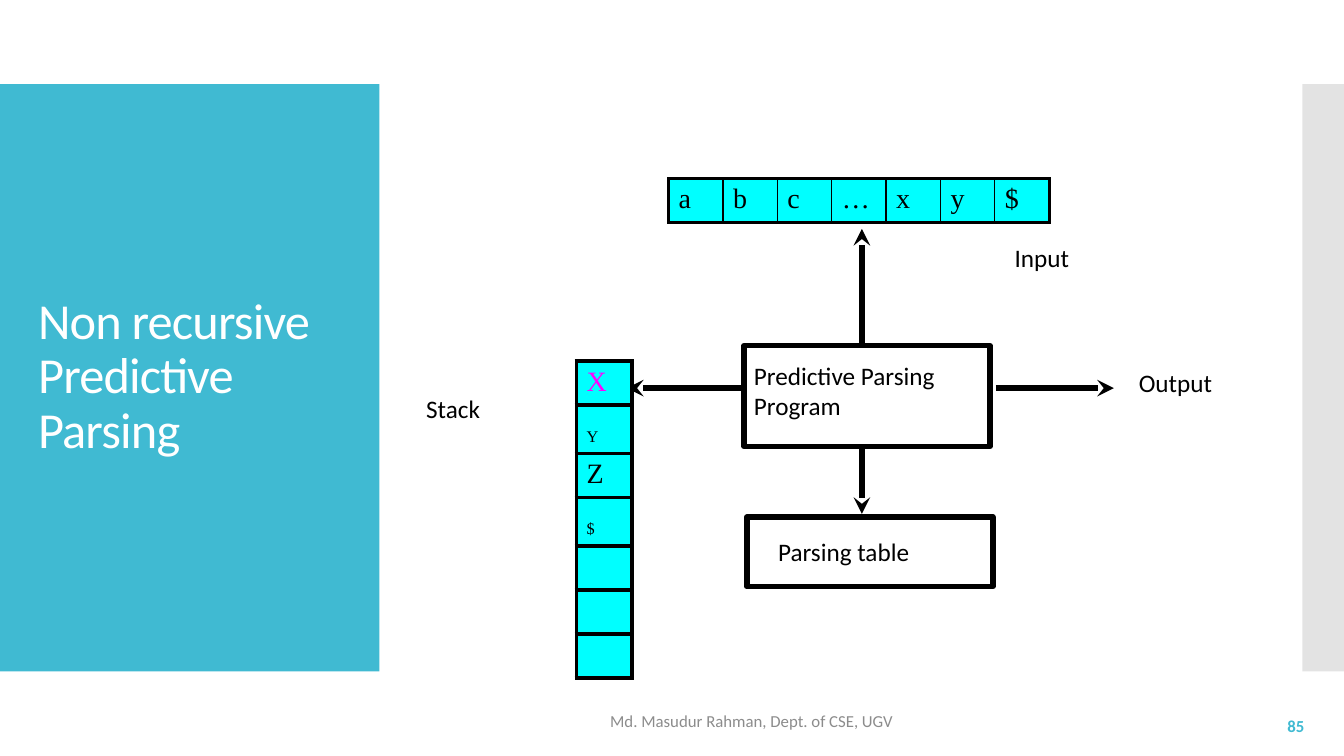
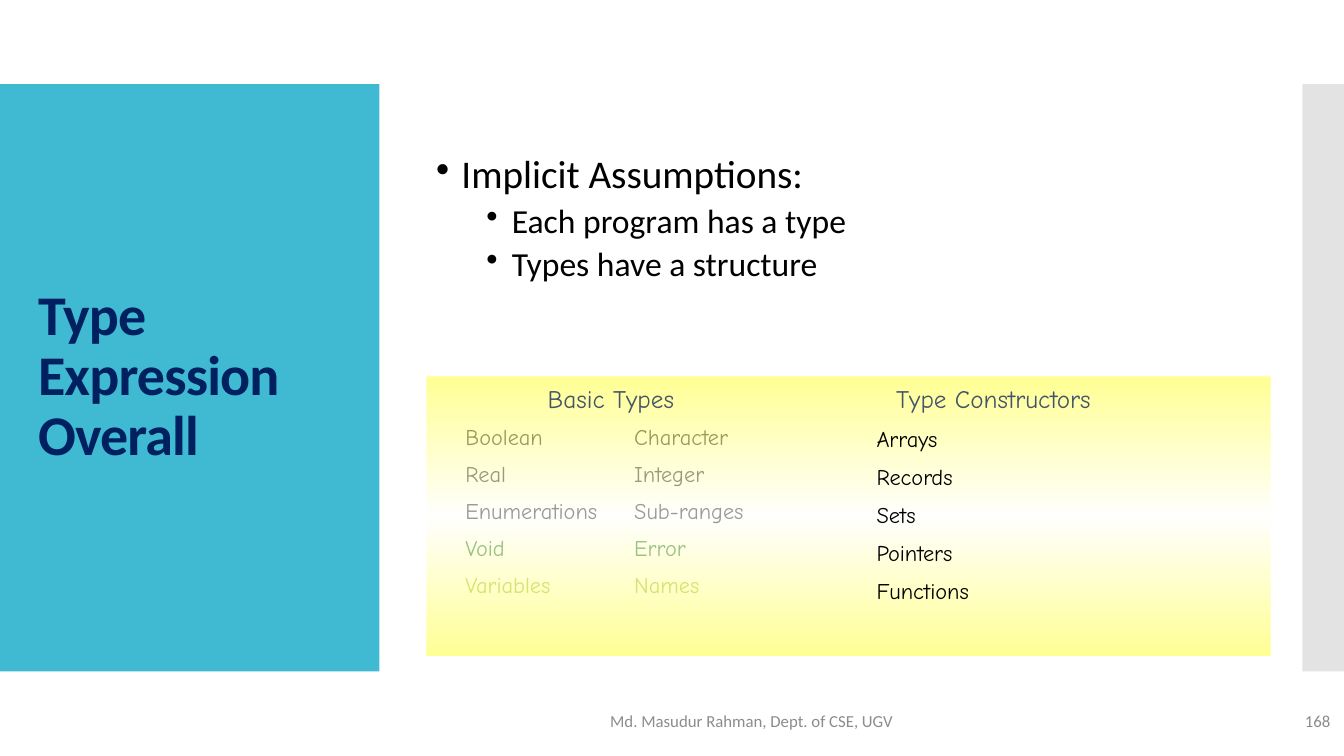
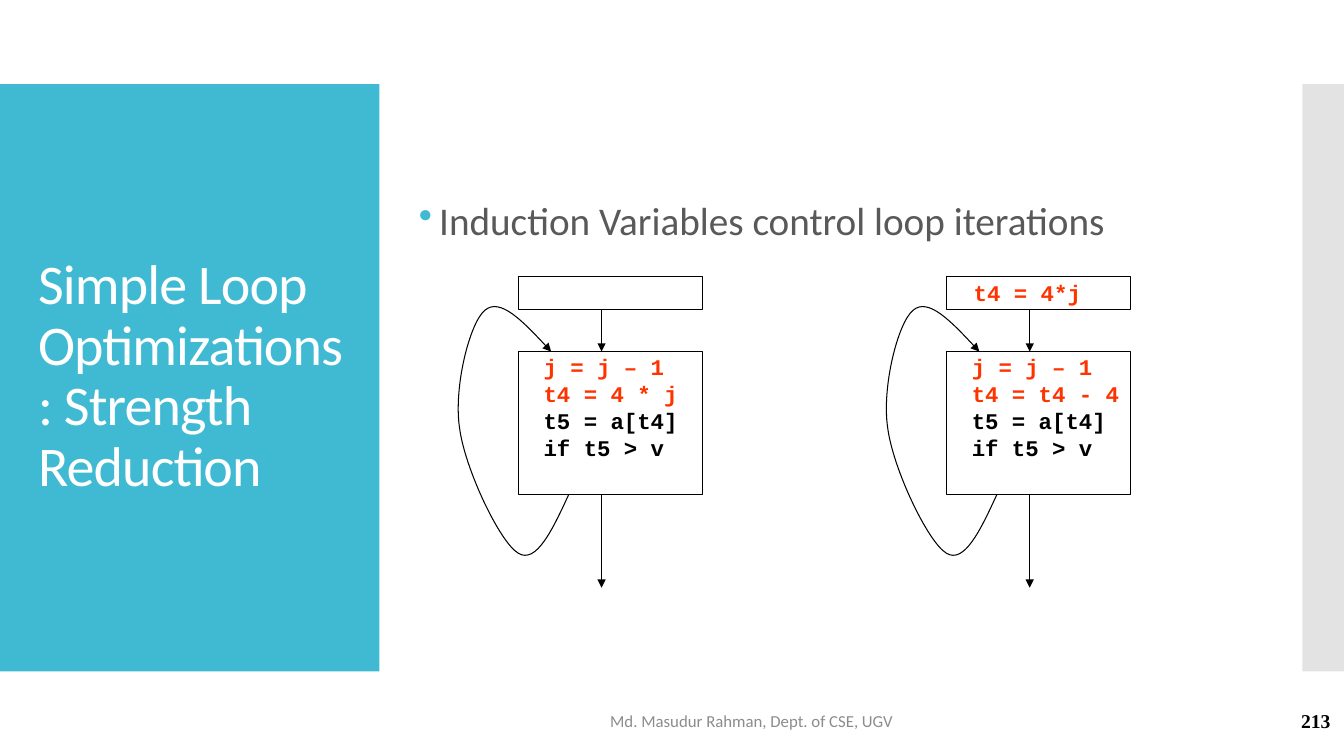
from copy import deepcopy
from dataclasses import dataclass, replace

from lxml.etree import SubElement
from pptx import Presentation
from pptx.dml.color import RGBColor
from pptx.enum.shapes import MSO_CONNECTOR, MSO_SHAPE
from pptx.enum.text import MSO_ANCHOR, PP_ALIGN
from pptx.oxml.ns import qn
from pptx.util import Cm, Pt

COLORS = {
    "accent": "40BAD2", "side": "C8C8C8", "white": "FFFFFF", "black": "000000",
    "navy": "002060", "muted": "8C8C8C", "body": "595959", "cell": "00FFFF",
    "magenta": "FF00FF", "yellow": "FFFF4D", "slate": "44546A",
    "green": "006600", "lime": "90BB23", "changed": "FF3300",
}
FOOTER = "Md. Masudur Rahman, Dept. of CSE, UGV"


@dataclass(frozen=True)
class Look:
    size: float
    color: str = "black"
    font: str = "Calibri"
    bold: bool = False
    spacing: int = 0
    baseline: int = 0


@dataclass(frozen=True)
class Bullet:
    indent: float
    hang: float
    color: str = "black"


TITLE = Look(40, "white", spacing=-60)
LABEL = Look(18)
SYMBOL = Look(20, font="Times New Roman")
SUBSCRIPT = replace(SYMBOL, baseline=-25000)
TYPE_NAME = Look(16, font="Comic Neue")
TYPE_HEAD = Look(18, "slate", "Comic Neue")
CODE = Look(16, font="Courier New", bold=True)
CHANGED = replace(CODE, color="changed")
SMALL = Look(12, "muted")


def rgb(name):
    return RGBColor.from_string(COLORS[name])


def set_opacity(shape, percent):
    for color in shape._element.spPr.iter(qn("a:srgbClr")):
        SubElement(color, qn("a:alpha"), val=str(percent * 1000))


class Deck:
    def __init__(self):
        self.prs = Presentation()
        self.prs.slide_width, self.prs.slide_height = Cm(33.87), Cm(19.05)
        self.slide = None

    @property
    def shapes(self):
        return self.slide.shapes

    def start(self, title, look=TITLE):
        """Open a slide with the bands, its title and the footer."""
        self.slide = self.prs.slides.add_slide(self.prs.slide_layouts[6])
        self.band(0, 9.56, "accent")
        set_opacity(self.band(32.82, 1.05, "side"), 50)
        self.text((0.71, 3.12, 8.18, 12.78), [(title, look)],
                  anchor=MSO_ANCHOR.MIDDLE, line_spacing=0.9)
        self.text((10.74, 17.65, 16.41, 1.02), [(FOOTER, SMALL)],
                  PP_ALIGN.CENTER, MSO_ANCHOR.MIDDLE)

    def number(self, label, look=SMALL, area=(29.54, 17.65, 4.24, 1.02)):
        self.text(area, [(label, look)], PP_ALIGN.RIGHT, MSO_ANCHOR.MIDDLE)

    def rectangle(self, area):
        shape = self.shapes.add_shape(MSO_SHAPE.RECTANGLE, *map(Cm, area))
        shape.shadow.inherit = False
        shape.line.fill.background()
        return shape

    def band(self, left, width, color):
        shape = self.rectangle((left, 2.12, width, 14.8))
        shape.fill.solid()
        shape.fill.fore_color.rgb = rgb(color)
        return shape

    def glow(self, area, edge, middle, opacity):
        """Rectangle whose fill runs from edge to middle and back, downwards."""
        shape = self.rectangle(area)
        shape.fill.gradient()
        shape.fill.gradient_angle = 90
        first = next(shape._element.spPr.iter(qn("a:gs")))
        first.addnext(deepcopy(first))
        for stop, color, place in zip(shape.fill.gradient_stops,
                                      (edge, middle, edge), (0, 0.5, 1)):
            stop.color.rgb = rgb(color)
            stop.position = place
        set_opacity(shape, opacity)

    def set_lines(self, frame, lines, align=PP_ALIGN.LEFT,
                  anchor=MSO_ANCHOR.TOP, line_spacing=None, before=0,
                  bullets=()):
        frame.word_wrap = True
        frame.vertical_anchor = anchor
        for index, (words, look) in enumerate(lines):
            paragraph = frame.add_paragraph() if index else frame.paragraphs[0]
            paragraph.alignment = align
            if bullets:
                self.add_bullet(paragraph, bullets[index])
            if line_spacing:
                paragraph.line_spacing = line_spacing
            paragraph.space_before = Pt(before if index else 0)
            run = paragraph.add_run()
            run.text = words
            run.font.size = Pt(look.size)
            run.font.name = look.font
            run.font.bold = look.bold
            run.font.color.rgb = rgb(look.color)
            properties = run._r.get_or_add_rPr()
            if look.spacing:
                properties.set("spc", str(look.spacing))
            if look.baseline:
                properties.set("baseline", str(look.baseline))

    def add_bullet(self, paragraph, bullet):
        properties = paragraph._p.get_or_add_pPr()
        properties.set("marL", str(Cm(bullet.indent)))
        properties.set("indent", str(-Cm(bullet.hang)))
        color = SubElement(properties, qn("a:buClr"))
        SubElement(color, qn("a:srgbClr"), val=COLORS[bullet.color])
        SubElement(properties, qn("a:buChar"), char="•")

    def text(self, area, lines, *args, **options):
        box = self.shapes.add_textbox(*map(Cm, area))
        self.set_lines(box.text_frame, lines, *args, **options)

    def box(self, area, weight, lines=(), left=0.25, top=0.0,
            anchor=MSO_ANCHOR.TOP):
        """Outlined box; left and top are the margins of its text."""
        shape = self.rectangle(area)
        shape.fill.background()
        self.ink(shape.line, weight)
        frame = shape.text_frame
        frame.margin_left, frame.margin_top = Cm(left), Cm(top)
        frame.margin_right = frame.margin_bottom = 0
        self.set_lines(frame, lines, anchor=anchor)

    def ink(self, line, weight):
        line.fill.solid()
        line.fill.fore_color.rgb = rgb("black")
        line.width = Pt(weight)

    def arrow_tip(self, shape, weight, tip):
        self.ink(shape.line, weight)
        line = shape._element.spPr.find(qn("a:ln"))
        SubElement(line, qn("a:tailEnd"), type=tip)

    def arrow(self, start, end, weight, tip):
        connector = self.shapes.add_connector(
            MSO_CONNECTOR.STRAIGHT, *map(Cm, start + end))
        self.arrow_tip(connector, weight, tip)
        SubElement(connector._element.spPr, qn("a:effectLst"))

    def curved_arrow(self, points, weight, tip):
        """Bezier arrow: a start, then two handles and an end per segment."""
        start, *rest = [(Cm(x), Cm(y)) for x, y in points]
        builder = self.shapes.build_freeform(*start)
        builder.add_line_segments(rest, close=False)
        shape = builder.convert_to_shape()
        shape.shadow.inherit = False
        shape.fill.background()
        outline = next(shape._element.spPr.iter(qn("a:path")))
        segments = list(outline)[1:]
        for index in range(0, len(segments), 3):
            curve = SubElement(outline, qn("a:cubicBezTo"))
            for segment in segments[index:index + 3]:
                curve.append(segment[0])
                outline.remove(segment)
        self.arrow_tip(shape, weight, tip)

    def table(self, corner, width, heights, rows, fill=None, outer=0, inner=0):
        """Table of (text, look) cells; None leaves a cell empty."""
        columns = len(rows[0])
        table = self.shapes.add_table(
            len(rows), columns, *map(Cm, corner),
            Cm(width * columns), Cm(sum(heights))).table
        table.first_row = table.horz_banding = False
        for column in table.columns:
            column.width = Cm(width)
        for r, (height, row) in enumerate(zip(heights, rows)):
            table.rows[r].height = Cm(height)
            for c, content in enumerate(row):
                cell = table.cell(r, c)
                edges = {"L": c == 0, "R": c == columns - 1,
                         "T": r == 0, "B": r == len(rows) - 1}
                for side, outside in edges.items():
                    self.border(cell, side, outer if outside else inner)
                if fill:
                    cell.fill.solid()
                    cell.fill.fore_color.rgb = rgb(fill)
                else:
                    cell.fill.background()
                if content:
                    self.set_lines(cell.text_frame, [content])
        return table

    def border(self, cell, side, weight):
        if weight:
            line = SubElement(cell._tc.get_or_add_tcPr(), qn("a:ln" + side),
                              w=str(Pt(weight)))
            paint = SubElement(line, qn("a:solidFill"))
            SubElement(paint, qn("a:srgbClr"), val=COLORS["black"])


def predictive_parsing(deck):
    deck.start("Non recursive Predictive Parsing", replace(TITLE, size=36))
    deck.number("85", Look(12, "accent", bold=True), (27.84, 17.65, 5.28, 1.27))
    deck.box((18.75, 8.71, 6.2, 2.54), 4,
             [("Predictive Parsing", LABEL), ("Program", LABEL)], top=0.36)
    deck.box((18.82, 13.03, 6.2, 1.75), 4, [("Parsing table", LABEL)],
             left=0.79, anchor=MSO_ANCHOR.MIDDLE)
    for start, end in [((21.72, 8.71), (21.72, 5.77)),
                       ((18.75, 9.78), (15.8, 9.78)),
                       ((25.1, 9.78), (28.07, 9.78)),
                       ((21.72, 11.25), (21.72, 12.95))]:
        deck.arrow(start, end, 4, "stealth")
    for label, left, top in [("Input", 25.32, 5.97), ("Output", 28.45, 9.14),
                             ("Stack", 10.49, 9.78)]:
        deck.text((left, top, 2.92, 1.27), [(label, LABEL)])
    stack = [("X", replace(SYMBOL, color="magenta")), ("Y", SUBSCRIPT),
             ("Z", SYMBOL), ("$", SUBSCRIPT), None, None, None]
    heights = [1.21 if cell and cell[1] == SUBSCRIPT else 1.11 for cell in stack]
    deck.table((14.53, 9.1), 1.4, heights, [[cell] for cell in stack],
               "cell", 3, 3)
    deck.table((16.85, 4.5), 1.37, [1.09],
               [[(symbol, SYMBOL) for symbol in "abc…xy$"]], "cell", 2.25, 1)


def type_expression(deck):
    deck.start("Type Expression Overall",
               replace(TITLE, color="navy", bold=True))
    deck.number("168")
    basic_types = [
        ("Boolean", "Character", "black"), ("Real", "Integer", "black"),
        ("Enumerations", "Sub-ranges", "black"), ("Void", "Error", "green"),
        ("Variables", "Names", "lime")]
    rows = [[(name, replace(TYPE_NAME, color=color)) for name in names]
            for *names, color in basic_types]
    table = deck.table((10.21, 10.59), 5.52, [0.91] * len(rows), rows)
    for row in range(len(rows)):
        table.cell(row, 0).margin_left = Cm(1.52)
    outer, nested = Bullet(0.64, 0.64), Bullet(1.91, 0.64)
    deck.text((10.74, 3.78, 21.26, 4.55),
              [("Implicit Assumptions:", Look(28)),
               ("Each program has a type", Look(24)),
               ("Types have a structure", Look(24))],
              line_spacing=0.9, before=5, bullets=(outer, nested, nested))
    deck.glow((10.75, 9.5, 21.27, 7.02), "yellow", "white", 60)
    for head, left in [("Basic Types", 10.1), ("Type Constructors", 19.74)]:
        deck.text((left, 9.53, 10.59, 1.02), [(head, TYPE_HEAD)],
                  PP_ALIGN.CENTER)
    constructors = ("Arrays", "Records", "Sets", "Pointers", "Functions")
    deck.text((21.84, 10.59, 10.59, 5.05),
              [(name, TYPE_NAME) for name in constructors], before=8)


def loop_flow(deck, left, setup, update):
    """Flow chart of one loop: setup block, loop body and back edge."""
    body_top, body_bottom, middle = 8.86, 12.47, left + 2.1
    deck.box((left, 6.96, 4.65, 0.84), 0.75, setup, left=0.69,
             anchor=MSO_ANCHOR.MIDDLE)
    deck.box((left, body_top, 4.65, body_bottom - body_top), 0.75,
             [("j = j – 1", CHANGED), (update, CHANGED),
              ("t5 = a[t4]", CODE), ("if t5 > v", CODE)], left=0.64, top=0.05)
    deck.arrow((middle, body_bottom), (middle, 14.81), 0.75, "triangle")
    deck.arrow((middle, 7.8), (middle, body_top), 0.75, "triangle")
    back_edge = [
        (1.27, body_bottom),
        (0.86, 13.36), (0.45, 14.22), (0, 13.94),
        (-0.46, 13.67), (-1.35, 11.81), (-1.48, 10.77),
        (-1.63, 9.75), (-1.22, 8.13), (-0.84, 7.82),
        (-0.46, 7.49), (0.2, 8.18), (0.83, body_top)]
    deck.curved_arrow([(left + x, y) for x, y in back_edge], 0.75, "triangle")


def strength_reduction(deck):
    deck.start("Simple Loop Optimizations: Strength Reduction")
    deck.number("213", Look(14, font="Times New Roman", bold=True))
    deck.text((10.31, 4.65, 21.59, 1.91),
              [("Induction Variables control loop iterations",
                Look(28, "body"))],
              anchor=MSO_ANCHOR.MIDDLE, line_spacing=0.9,
              bullets=[Bullet(0.51, 0.51, "accent")])
    loop_flow(deck, 13.06, [], "t4 = 4 * j")
    loop_flow(deck, 23.85, [("t4 = 4*j", CHANGED)], "t4 = t4 - 4")


def main():
    deck = Deck()
    predictive_parsing(deck)
    type_expression(deck)
    strength_reduction(deck)
    deck.prs.save("out.pptx")


if __name__ == "__main__":
    main()
